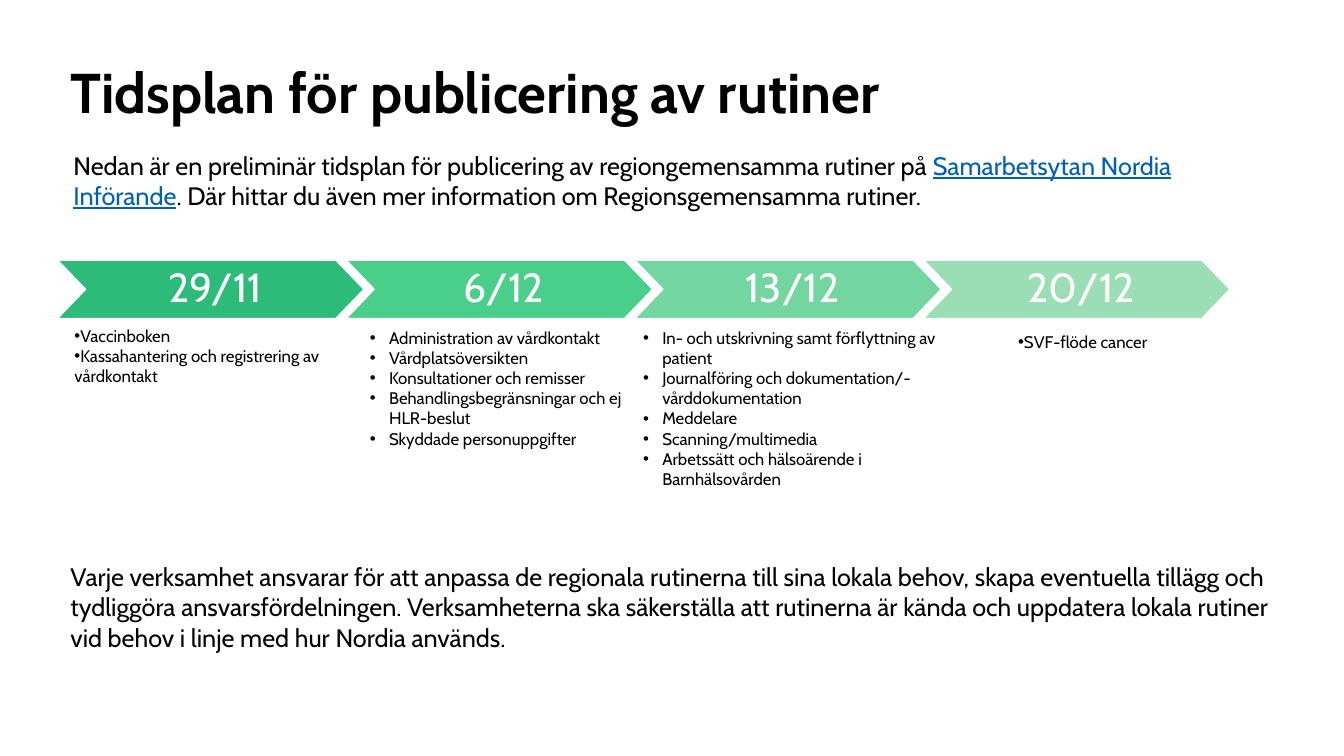
from lxml import etree
from pptx import Presentation
from pptx.dml.color import RGBColor
from pptx.enum.shapes import MSO_SHAPE as Shape
from pptx.enum.text import MSO_ANCHOR as Anchor, MSO_AUTO_SIZE as AutoSize, PP_ALIGN as Align
from pptx.oxml.ns import qn
from pptx.util import Inches, Pt

BLACK = RGBColor(0x00, 0x00, 0x00)
NEAR_BLACK = RGBColor(0x01, 0x00, 0x00)
WHITE = RGBColor(0xFF, 0xFF, 0xFF)
LINK_BLUE = RGBColor(0x00, 0x5E, 0xB8)
GREENS = [
    RGBColor(0x2C, 0xBB, 0x79),
    RGBColor(0x4A, 0xCF, 0x8B),
    RGBColor(0x73, 0xD5, 0x9F),
    RGBColor(0x9B, 0xDE, 0xB6),
]

DATES = ["29/11", "6/12", "13/12", "20/12"]
FIRST_CHEVRON, CHEVRON_STEP = 5.7, 28.63

ROUTINES = [
    ((6.4, 31.8, 27.1, 7.1), 0, ["Vaccinboken", "Kassahantering och registrering av vårdkontakt"]),
    ((35.7, 32, 28.2, 13.1), 0.19, [
        "Administration av vårdkontakt",
        "Vårdplatsöversikten",
        "Konsultationer och remisser",
        "Behandlingsbegränsningar och ej HLR-beslut",
        "Skyddade personuppgifter",
    ]),
    ((62.8, 32, 32.1, 17.2), 0.19, [
        "In- och utskrivning samt förflyttning av patient",
        "Journalföring och dokumentation/-vårddokumentation",
        "Meddelare",
        "Scanning/multimedia",
        "Arbetssätt och hälsoärende i Barnhälsovården",
    ]),
    ((100, 32.4, 16.4, 3), 0, ["SVF-flöde cancer"]),
]

INTRO = [
    "Nedan är en preliminär tidsplan för publicering av regiongemensamma rutiner på ",
    "Samarbetsytan Nordia Införande",
    ". Där hittar du även mer information om Regionsgemensamma rutiner.",
]
CLOSING = (
    "Varje verksamhet ansvarar för att anpassa de regionala rutinerna till sina lokala behov, "
    "skapa eventuella tillägg och tydliggöra ansvarsfördelningen. Verksamheterna ska säkerställa "
    "att rutinerna är kända och uppdatera lokala rutiner vid behov i linje med hur Nordia används."
)


class SlideBuilder:
    font = "Cabin"
    cell = Inches(0.1)

    def __init__(self, presentation):
        self.slide = presentation.slides.add_slide(presentation.slide_layouts[5])

    def grid(self, *cells):
        return [round(count * self.cell) for count in cells]

    def format_runs(self, paragraph, size, color, bold=False):
        for run in paragraph.runs:
            run.font.name = self.font
            run.font.size = Pt(size)
            run.font.bold = bold
            run.font.color.rgb = color

    def title(self, area, text):
        shape = self.slide.shapes.title
        shape.left, shape.top, shape.width, shape.height = self.grid(*area)
        text_frame = shape.text_frame
        text_frame.text = text
        text_frame.auto_size = AutoSize.NONE
        text_frame.vertical_anchor = Anchor.TOP
        paragraph = text_frame.paragraphs[0]
        paragraph.alignment = Align.LEFT
        paragraph.line_spacing = 0.9
        self.format_runs(paragraph, 40, BLACK, bold=True)

    def text_box(self, area, text, size, color):
        text_frame = self.slide.shapes.add_textbox(*self.grid(*area)).text_frame
        text_frame.word_wrap = True
        text_frame.text = text
        for paragraph in text_frame.paragraphs:
            self.format_runs(paragraph, size, color)
        return text_frame

    def linked_text(self, area, before, link, after):
        paragraph = self.text_box(area, before, 18, BLACK).paragraphs[0]
        link_run = paragraph.add_run()
        link_run.text = link
        paragraph.add_run().text = after
        self.format_runs(paragraph, 18, BLACK)
        link_run.font.color.rgb = LINK_BLUE
        link_run.font.underline = True

    def bullet_list(self, area, indent, items):
        text_frame = self.text_box(area, "\n".join(items), 12, NEAR_BLACK)
        for paragraph in text_frame.paragraphs:
            properties = paragraph._p.get_or_add_pPr()
            properties.set("marL", str(Inches(indent)))
            properties.set("indent", str(-Inches(indent)))
            etree.SubElement(properties, qn("a:buFont")).set("typeface", "Arial")
            etree.SubElement(properties, qn("a:buChar")).set("char", "•")

    def chevron(self, area, text, fill):
        shape = self.slide.shapes.add_shape(Shape.CHEVRON, *self.grid(*area))
        shape.adjustments[0] = 0.48
        shape.shadow.inherit = False
        shape.fill.solid()
        shape.fill.fore_color.rgb = fill
        shape.line.color.rgb = WHITE
        shape.line.width = Pt(1)
        text_frame = shape.text_frame
        text_frame.text = text
        text_frame.vertical_anchor = Anchor.MIDDLE
        text_frame.margin_left = Inches(0.09)
        text_frame.margin_right = 0
        text_frame.margin_top = text_frame.margin_bottom = Inches(0.04)
        paragraph = text_frame.paragraphs[0]
        paragraph.alignment = Align.CENTER
        paragraph.line_spacing = 0.9
        self.format_runs(paragraph, 29, WHITE)


def main():
    presentation = Presentation()
    presentation.slide_width = Inches(13.33)
    presentation.slide_height = Inches(7.5)
    builder = SlideBuilder(presentation)
    builder.title((6, 6, 121.3, 15.7), "Tidsplan för publicering av rutiner")
    builder.linked_text((6.3, 14.4, 121.3, 7.5), *INTRO)
    for area, indent, items in ROUTINES:
        builder.bullet_list(area, indent, items)
    for index, (date, green) in enumerate(zip(DATES, GREENS)):
        left = FIRST_CHEVRON + index * CHEVRON_STEP
        builder.chevron((left, 25.8, 30.4, 5.8), date, green)
    builder.text_box((6, 55.2, 121.3, 10.1), CLOSING, 18, BLACK)
    presentation.save("out.pptx")


if __name__ == "__main__":
    main()
